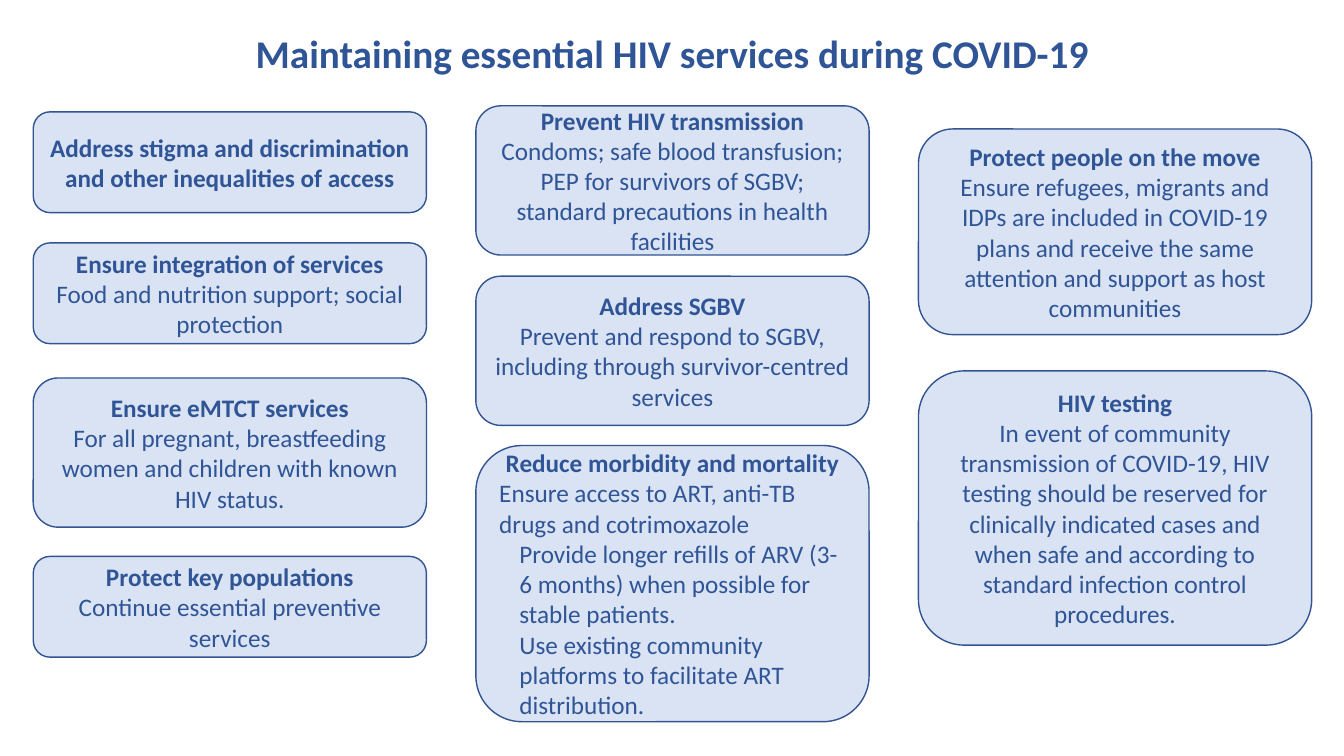
from dataclasses import dataclass

from pptx import Presentation
from pptx import util as u
from pptx.dml.color import RGBColor
from pptx.enum import shapes, text

PX = 9144  # EMU per px, 100 px to the inch
FONT = "Calibri"
TEXT_BLUE, LINE_BLUE, PALE_BLUE = "2F5597", "325491", "DAE3F3"
CARD_WIDTH = 390
STEP_INDENT = 20


@dataclass(frozen=True)
class Service:
    top: int
    height: int
    heading: str
    detail: str = ""
    steps: tuple[str, ...] = ()


COLUMNS: dict[int, list[Service]] = {
    33: [
        Service(111, 100, "Address stigma and discrimination and other inequalities of access"),
        Service(241, 100, "Ensure integration of services",
                "Food and nutrition support; social protection"),
        Service(375, 148, "Ensure eMTCT services",
                "For all pregnant, breastfeeding women and children with known HIV status."),
        Service(552, 100, "Protect key populations", "Continue essential preventive services"),
    ],
    472: [
        Service(105, 148, "Prevent HIV transmission",
                "Condoms; safe blood transfusion; PEP for survivors of SGBV; "
                "standard precautions in health facilities"),
        Service(274, 148, "Address SGBV",
                "Prevent and respond to SGBV, including through survivor-centred services"),
        Service(442, 274, "Reduce morbidity and mortality",
                "Ensure access to ART, anti-TB drugs and cotrimoxazole",
                ("Provide longer refills of ARV (3-6 months) when possible for stable patients.",
                 "Use existing community platforms to facilitate ART distribution.")),
    ],
    911: [
        Service(128, 204, "Protect people on the move",
                "Ensure refugees, migrants and IDPs are included in COVID-19 plans and receive "
                "the same attention and support as host communities"),
        Service(368, 272, "HIV testing",
                "In event of community transmission of COVID-19, HIV testing should be reserved "
                "for clinically indicated cases and when safe and according to standard "
                "infection control procedures."),
    ],
}


def colour(hex_value: str) -> RGBColor:
    return RGBColor.from_string(hex_value)


def px(*lengths: int) -> list[u.Emu]:
    return [u.Emu(length * PX) for length in lengths]


def prepare_frame(frame) -> None:
    frame.word_wrap = True
    frame.vertical_anchor = text.MSO_ANCHOR.MIDDLE


def format_paragraph(paragraph, size: int, bold: bool, centred: bool = True) -> None:
    paragraph.alignment = text.PP_ALIGN.CENTER if centred else text.PP_ALIGN.LEFT
    for run in paragraph.runs:
        run.font.name = FONT
        run.font.size = u.Pt(size)
        run.font.bold = bold
        run.font.color.rgb = colour(TEXT_BLUE)


def indent_step(paragraph) -> None:
    paragraph.level = 1
    properties = paragraph._p.get_or_add_pPr()
    properties.set("marL", str(STEP_INDENT * PX))
    properties.set("indent", "0")


def add_title(slide, wording: str) -> None:
    title = slide.shapes.add_textbox(*px(54, 0, 1225, 111))
    prepare_frame(title.text_frame)
    title.text_frame.text = wording
    line = title.text_frame.paragraphs[0]
    line.line_spacing = 0.9
    line.space_after = u.Pt(6)
    format_paragraph(line, 28, bold=True)


def add_service(slide, left: int, service: Service) -> None:
    card = slide.shapes.add_shape(shapes.MSO_SHAPE.ROUNDED_RECTANGLE,
                                  *px(left, service.top, CARD_WIDTH, service.height))
    card.shadow.inherit = False
    card.fill.solid()
    card.fill.fore_color.rgb = colour(PALE_BLUE)
    card.line.color.rgb = colour(LINE_BLUE)
    card.line.width = u.Pt(1)

    frame = card.text_frame
    prepare_frame(frame)
    frame.text = service.heading
    format_paragraph(frame.paragraphs[0], 18, bold=True)
    if service.detail:
        detail = frame.add_paragraph()
        detail.text = service.detail
        format_paragraph(detail, 18, bold=False, centred=not service.steps)
    for wording in service.steps:
        step = frame.add_paragraph()
        step.text = wording
        indent_step(step)
        format_paragraph(step, 18, bold=False, centred=False)


def main() -> None:
    deck = Presentation()
    deck.slide_width, deck.slide_height = px(1333, 750)
    slide = deck.slides.add_slide(deck.slide_layouts[6])
    add_title(slide, "Maintaining essential HIV services during COVID-19")
    for left, services in COLUMNS.items():
        for service in services:
            add_service(slide, left, service)
    deck.save("out.pptx")


if __name__ == "__main__":
    main()
